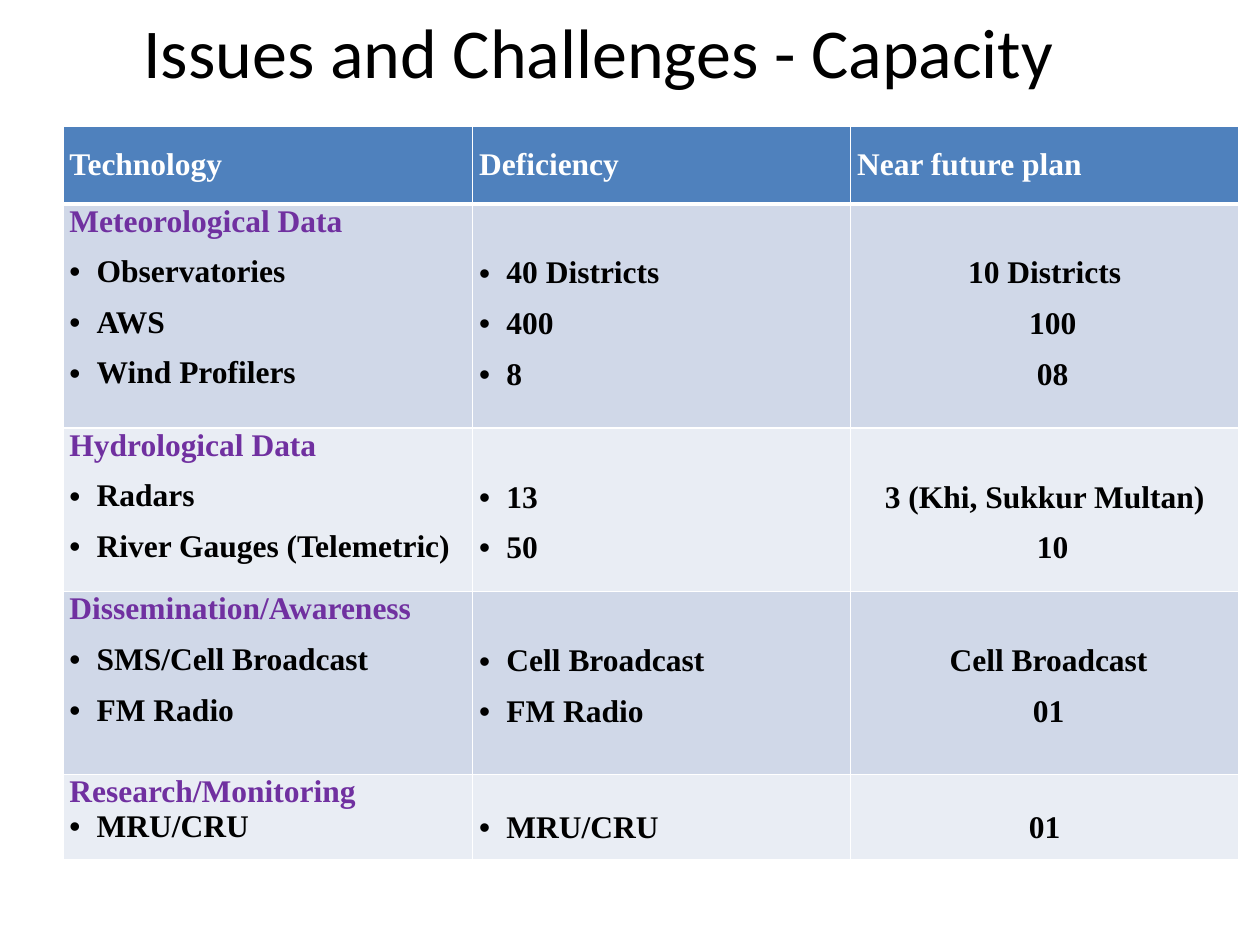
from dataclasses import dataclass

from lxml import etree
from pptx import Presentation
from pptx.dml.color import RGBColor
from pptx.enum.text import MSO_ANCHOR, MSO_AUTO_SIZE, PP_ALIGN
from pptx.oxml.ns import qn
from pptx.util import Cm, Pt

LEFT, CENTER = PP_ALIGN.LEFT, PP_ALIGN.CENTER
TOP, MIDDLE = MSO_ANCHOR.TOP, MSO_ANCHOR.MIDDLE

WHITE = RGBColor(0xFF, 0xFF, 0xFF)
BLACK = RGBColor(0, 0, 0)
PURPLE = RGBColor(0x70, 0x30, 0xA0)
BLUE = RGBColor(0x4F, 0x81, 0xBD)
BANDS = (RGBColor(0xD0, 0xD8, 0xE8), RGBColor(0xE9, 0xED, 0xF4))

COLUMN_WIDTHS = (8.26, 7.62, 7.82)
HEADER_HEIGHT = 1.57
HEADINGS = ("Technology", "Deficiency", "Near future plan")
BULLET_INDENT = Cm(0.55)
SIDE_MARGIN = Cm(0.13)
THIN, THICK = Pt(1), Pt(3)


@dataclass
class Section:
    name: str
    height: float
    items: list[tuple[str, str, str]]
    plan_indents: tuple[float, ...]
    before: float = 6
    after: float = 3

    @property
    def first_line_offset(self) -> int:
        """Space that lines up the other columns with the first item."""
        return Pt(20.7 + self.before + self.after)


SECTIONS = [
    Section("Meteorological Data", 4.52, [
        ("Observatories", "40 Districts", "10 Districts"),
        ("AWS", "400", "100"),
        ("Wind Profilers", "8", "08"),
    ], (0, 0.32, 0.32)),
    Section("Hydrological Data", 3.3, [
        ("Radars", "13", "3 (Khi, Sukkur Multan)"),
        ("River Gauges (Telemetric)", "50", "10"),
    ], (0, 0.32)),
    Section("Dissemination/Awareness", 3.68, [
        ("SMS/Cell Broadcast", "Cell Broadcast", "Cell Broadcast"),
        ("FM Radio", "FM Radio", "01"),
    ], (0.16, 0.16)),
    Section("Research/Monitoring", 1.73, [
        ("MRU/CRU", "MRU/CRU", "01"),
    ], (0,), before=0, after=0),
]


@dataclass
class Line:
    text: str
    color: RGBColor = BLACK
    align: PP_ALIGN = LEFT
    bullet: bool = False
    indent: float = 0


def apply(target, formats: dict) -> None:
    for name, value in formats.items():
        setattr(target, name, value)


def set_borders(cell, top: int, bottom: int) -> None:
    properties = cell._tc.get_or_add_tcPr()
    widths = {"a:lnL": THIN, "a:lnR": THIN, "a:lnT": top, "a:lnB": bottom}
    for position, (tag, width) in enumerate(widths.items()):
        border = etree.Element(qn(tag), w=str(int(width)))
        fill = etree.SubElement(border, qn("a:solidFill"))
        etree.SubElement(fill, qn("a:srgbClr"), val=str(WHITE))
        properties.insert(position, border)


def indent_line(para, line: Line) -> None:
    properties = para._p.get_or_add_pPr()
    if line.bullet:
        properties.set("marL", str(int(BULLET_INDENT)))
        properties.set("indent", str(-int(BULLET_INDENT)))
        etree.SubElement(properties, qn("a:buFont"), typeface="Arial")
        etree.SubElement(properties, qn("a:buChar"), char="•")
    elif line.indent:
        properties.set("marL", str(int(Cm(line.indent))))


def fill_cell(cell, lines: list[Line], color: RGBColor, before: float,
              after: float, offset: int = 0, anchor: MSO_ANCHOR = TOP,
              top: int = THIN, bottom: int = THIN) -> None:
    apply(cell, {"margin_left": SIDE_MARGIN, "margin_right": SIDE_MARGIN,
                 "margin_top": offset, "margin_bottom": 0,
                 "vertical_anchor": anchor})
    cell.fill.solid()
    cell.fill.fore_color.rgb = color
    set_borders(cell, top, bottom)
    frame = cell.text_frame
    for number, line in enumerate(lines):
        para = frame.add_paragraph() if number else frame.paragraphs[0]
        apply(para, {"alignment": line.align, "space_before": Pt(before),
                     "space_after": Pt(after)})
        indent_line(para, line)
        span = para.add_run()
        span.text = line.text
        apply(span.font, {"name": "Times New Roman", "size": Pt(18), "bold": True})
        span.font.color.rgb = line.color


def add_title(page, text: str) -> None:
    title = page.shapes.title
    apply(title, {"left": Cm(2.54), "top": Cm(0.05),
                  "width": Cm(19.05), "height": Cm(1.96)})
    frame = title.text_frame
    apply(frame, {"word_wrap": False, "vertical_anchor": TOP,
                  "auto_size": MSO_AUTO_SIZE.SHAPE_TO_FIT_TEXT})
    para = frame.paragraphs[0]
    para.alignment = CENTER
    span = para.add_run()
    span.text = text
    apply(span.font, {"name": "Calibri", "size": Pt(40)})
    span.font.color.rgb = BLACK


def add_capacity_table(page) -> None:
    heights = [HEADER_HEIGHT] + [section.height for section in SECTIONS]
    table = page.shapes.add_table(
        len(heights), len(COLUMN_WIDTHS), Cm(1.27), Cm(2.54),
        Cm(sum(COLUMN_WIDTHS)), Cm(sum(heights))).table
    for column, width in zip(table.columns, COLUMN_WIDTHS):
        column.width = Cm(width)
    for row, height in zip(table.rows, heights):
        row.height = Cm(height)

    # Header row
    for column, heading in enumerate(HEADINGS):
        fill_cell(table.cell(0, column), [Line(heading, WHITE)], BLUE,
                  before=6, after=0, anchor=MIDDLE, bottom=THICK)

    # One row per section: technology, deficiency, plan
    for row, section in enumerate(SECTIONS, start=1):
        technologies, deficiencies, plans = zip(*section.items)
        columns = (
            [Line(section.name, PURPLE)]
            + [Line(text, bullet=True) for text in technologies],
            [Line(text, bullet=True) for text in deficiencies],
            [Line(text, align=CENTER, indent=indent)
             for text, indent in zip(plans, section.plan_indents)],
        )
        for column, lines in enumerate(columns):
            fill_cell(table.cell(row, column), lines, BANDS[(row - 1) % 2],
                      section.before, section.after,
                      offset=section.first_line_offset if column else 0,
                      top=THICK if row == 1 else THIN)


def main() -> None:
    deck = Presentation()
    apply(deck, {"slide_width": Cm(25.4), "slide_height": Cm(19.05)})
    page = deck.slides.add_slide(deck.slide_layouts[5])
    add_title(page, "Issues and Challenges - Capacity")
    add_capacity_table(page)
    deck.save("out.pptx")


if __name__ == "__main__":
    main()
